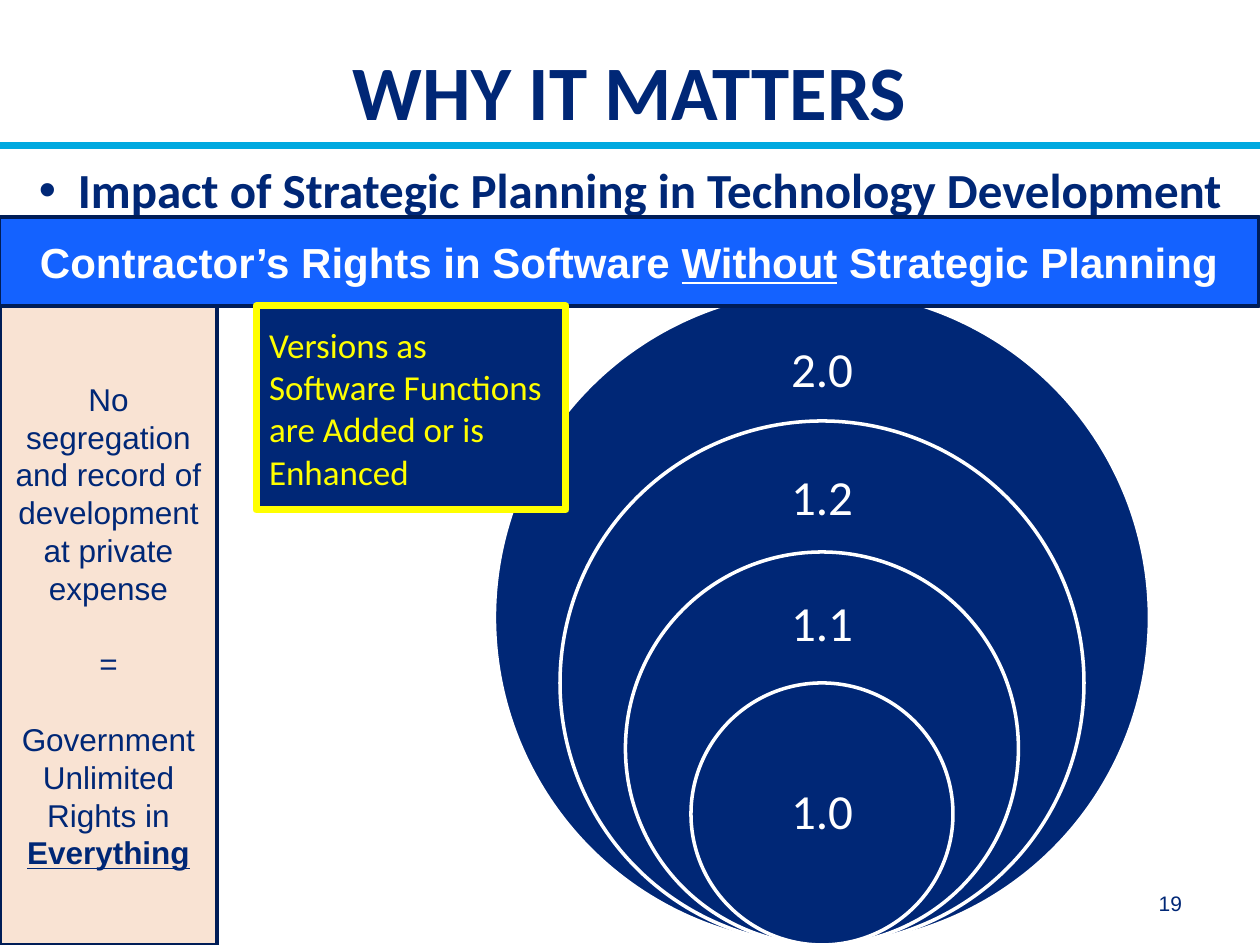
"""Build the slide on software rights without strategic planning."""
from lxml.etree import SubElement
from pptx import Presentation
from pptx.dml.color import RGBColor
from pptx.enum.shapes import MSO_CONNECTOR as Connector, MSO_SHAPE as Preset
from pptx.enum.text import MSO_ANCHOR as Anchor, MSO_AUTO_SIZE as AutoSize, PP_ALIGN as Align
from pptx.oxml.ns import qn
from pptx.util import Emu, Pt

NAVY = RGBColor(0x00, 0x27, 0x76)
DARK_NAVY = RGBColor(0x00, 0x1D, 0x57)
BLUE = RGBColor(0x14, 0x62, 0xFF)
CYAN = RGBColor(0x00, 0xA9, 0xE0)
PEACH = RGBColor(0xF9, 0xE3, 0xD3)
YELLOW = RGBColor(0xFF, 0xFF, 0x00)
WHITE = RGBColor(0xFF, 0xFF, 0xFF)

TITLE = "WHY IT MATTERS"
TOPIC = "Impact of Strategic Planning in Technology Development"
BANNER = [[("Contractor’s Rights in Software ", {}), ("Without", {"underline": True}),
           (" Strategic Planning", {})]]
SIDEBAR = [
    [("No segregation and record of development at private expense", {})],
    [("=", {})],
    [("Government Unlimited Rights in", {})],
    [("Everything", {"bold": True, "underline": True})],
]
CALLOUT = "Versions as Software Functions are Added or is Enhanced"
PAGE_NUMBER = "19"

# version, diameter in rings, label top and label height as shares of the diameter
VERSIONS = [
    ("2.0", 5, 0.05, 0.15),
    ("1.2", 4, 0.06, 0.18),
    ("1.1", 3, 0.075, 0.225),
    ("1.0", 2, 0.25, 0.5),
]
SLIDE_W, SLIDE_H = 1260, 945
RING = 131
CIRCLES_X = 822
LABEL_W = 183
RULE_Y = 146


def px(length):
    return Emu(round(length * 914400 / 126))


def box(*lengths):
    return [px(length) for length in lengths]


def apply(target, values):
    for name, value in values.items():
        setattr(target, name, value)


def write(shape, paragraphs, font, align=Align.CENTER, anchor=Anchor.MIDDLE, insets=(13, 6)):
    side, end = (px(inset) for inset in insets)
    frame = shape.text_frame
    apply(frame, {"word_wrap": True, "auto_size": AutoSize.NONE, "vertical_anchor": anchor,
                  "margin_left": side, "margin_right": side,
                  "margin_top": end, "margin_bottom": end})
    if isinstance(paragraphs, str):
        paragraphs = [[(paragraphs, {})]]
    for index, runs in enumerate(paragraphs):
        paragraph = frame.add_paragraph() if index else frame.paragraphs[0]
        paragraph.alignment = align
        for words, extra in runs:
            run = paragraph.add_run()
            run.text = words
            name, size, color = font[:3]
            apply(run.font, {"name": name, "size": Pt(size), "bold": "bold" in font[3:], **extra})
            run.font.color.rgb = color
    return frame.paragraphs


def add_filled(shapes, preset, place, fill, line, width):
    shape = shapes.add_shape(preset, *box(*place))
    shape.shadow.inherit = False
    shape.fill.solid()
    shape.fill.fore_color.rgb = fill
    shape.line.color.rgb = line
    shape.line.width = Pt(width)
    return shape


def place_placeholder(placeholder, *place):
    apply(placeholder, dict(zip(("left", "top", "width", "height"), box(*place))))
    return placeholder


def add_heading(slide):
    rule = slide.shapes.add_connector(Connector.STRAIGHT, *box(0, RULE_Y, SLIDE_W, RULE_Y))
    rule.line.color.rgb = CYAN
    rule.line.width = Pt(4)
    SubElement(rule._element.spPr, qn("a:effectLst"))

    title = place_placeholder(slide.shapes.title, 63, 18, 1134, 124)
    write(title, TITLE, ("Calibri", 44, NAVY, "bold"), anchor=Anchor.BOTTOM, insets=(0, 6))

    body = place_placeholder(slide.placeholders[1], 39, 160, 1207, 680)
    topic = write(body, TOPIC, ("Calibri", 28, NAVY, "bold"), Align.LEFT, Anchor.TOP, (0, 0))[0]
    properties = topic._p.get_or_add_pPr()
    properties.set("marL", str(px(39)))
    properties.set("indent", str(px(-39)))
    SubElement(properties, qn("a:buFont")).set("typeface", "Arial")
    SubElement(properties, qn("a:buChar")).set("char", "•")
    apply(topic, {"space_before": Pt(0), "space_after": Pt(24)})


def add_versions(slide):
    circles = slide.shapes.add_group_shape().shapes
    for version, rings, label_top, label_height in VERSIONS:
        diameter = rings * RING
        top = SLIDE_H - diameter
        add_filled(circles, Preset.OVAL, (CIRCLES_X - diameter / 2, top, diameter, diameter),
                   NAVY, WHITE, 2)
        label = circles.add_textbox(*box(CIRCLES_X - LABEL_W / 2, top + label_top * diameter,
                                         LABEL_W, label_height * diameter))
        write(label, version, ("Calibri", 28, WHITE), insets=(28, 28))[0].line_spacing = 0.9


def add_panels(slide):
    shapes = slide.shapes
    banner = add_filled(shapes, Preset.RECTANGLE, (-1, 217, 1260, 89), BLUE, DARK_NAVY, 2)
    write(banner, BANNER, ("Arial", 24, WHITE, "bold"))

    sidebar = add_filled(shapes, Preset.RECTANGLE, (0, 306, 217, 639), PEACH, DARK_NAVY, 2)
    reasons = write(sidebar, SIDEBAR, ("Arial", 18, NAVY))
    for reason in reasons:
        reason.line_spacing = Pt(21.6)
    for reason in reasons[1:3]:
        reason.space_before = Pt(21.6)

    callout = add_filled(shapes, Preset.RECTANGLE, (256, 306, 310, 204), NAVY, YELLOW, 4)
    write(callout, CALLOUT, ("Calibri", 20, YELLOW), Align.LEFT)


def main():
    deck = Presentation()
    deck.slide_width, deck.slide_height = box(SLIDE_W, SLIDE_H)
    slide = deck.slides.add_slide(deck.slide_layouts[1])
    add_heading(slide)
    page = slide.shapes.add_textbox(*box(1063, 888, 132, 34))
    write(page, PAGE_NUMBER, ("Arial", 12, NAVY), Align.RIGHT, Anchor.BOTTOM)
    add_versions(slide)
    add_panels(slide)
    deck.save("out.pptx")


if __name__ == "__main__":
    main()
